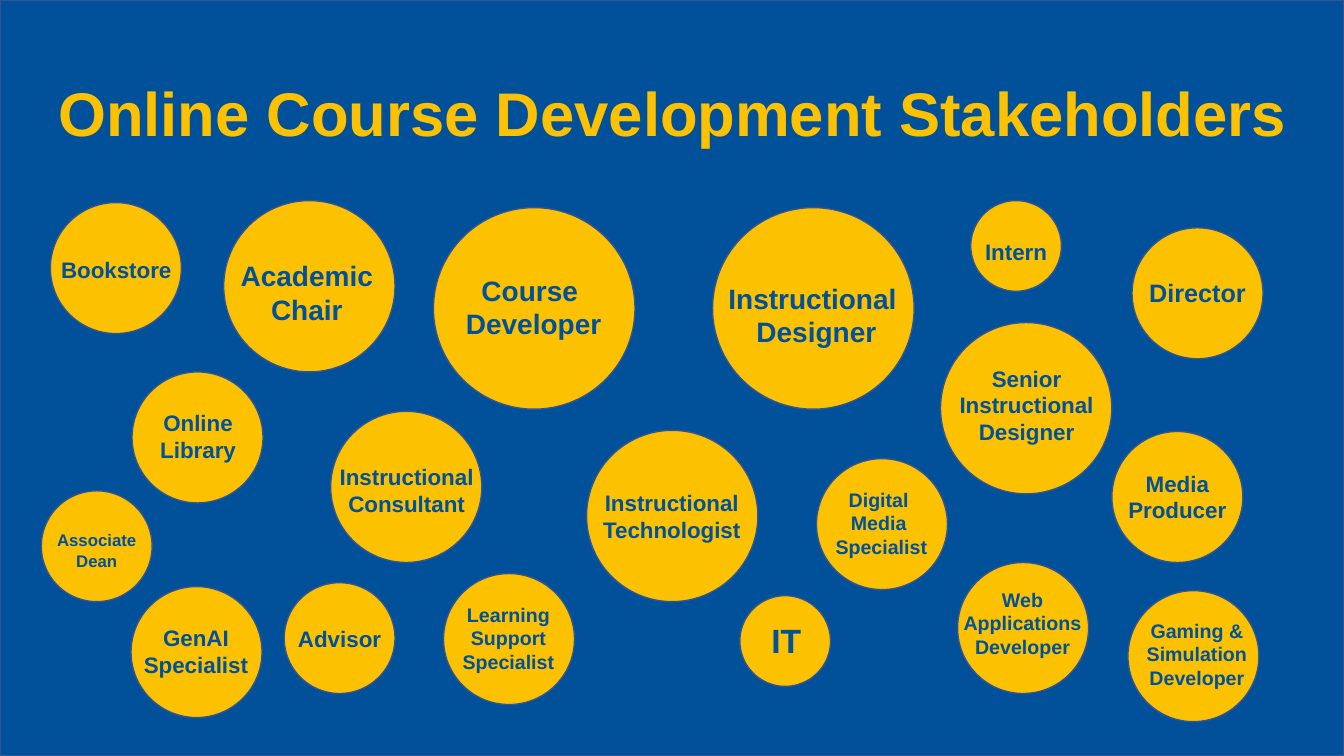
from pptx import Presentation
from pptx.dml.color import RGBColor
from pptx.enum.shapes import MSO_SHAPE
from pptx.enum.text import MSO_ANCHOR, MSO_AUTO_SIZE, PP_ALIGN
from pptx.util import Pt

BLUE = RGBColor(0x00, 0x50, 0x9A)
GOLD = RGBColor(0xFC, 0xC1, 0x00)
OUTLINE = RGBColor(0x32, 0x54, 0x91)
FONT = "Arial"
WIDTH, HEIGHT = 960, 540

TITLE = "Online Course Development Stakeholders"

# Label, font size, lines shown, circle (left, top, diameter), label (left, top, width)
STAKEHOLDERS = [
    ("Course \nDeveloper", 20, 2, (309.6, 148.3, 144), (321.1, 191.5, 120.2)),
    ("Instructional \nDesigner", 20, 2, (509, 148.3, 144), (511.2, 197.3, 144)),
    ("Senior\nInstructional \nDesigner", 16, 3, (671.8, 230.4, 122.4), (676.8, 257, 113)),
    ("Media\nProducer", 16, 2, (794.2, 308.2, 93.6), (794.2, 331.9, 93.6)),
    ("Digital \nMedia \nSpecialist", 14, 3, (583.2, 327.6, 93.6), (573.1, 344.9, 113)),
    ("Instructional\nTechnologist", 16, 2, (419, 307.4, 122.4), (423.4, 345.6, 113)),
    ("Instructional\nConsultant", 16, 2, (236.2, 293.8, 108), (234, 327.6, 113)),
    ("Academic\nChair", 20, 2, (159.8, 143.3, 122.4), (162.7, 181.4, 113)),
    ("Online\nLibrary", 16, 2, (94.3, 265.7, 93.6), (85, 288.7, 113)),
    ("Director", 18, 1, (808.6, 162.7, 93.6), (808.6, 194.4, 93.6)),
    ("Associate\nDean", 12, 2, (29.5, 350.6, 79.2), (29.5, 375.1, 79.2)),
    ("Web Applications Developer", 14, 3, (684, 401.8, 93.6), (673.9, 416.2, 113)),
    ("Advisor", 16, 1, (203, 416.2, 79.2), (203, 442.8, 79.2)),
    ("Learning\nSupport\nSpecialist", 14, 3, (316.8, 409.7, 93.6), (306.7, 427, 113)),
    ("IT", 24, 1, (528.5, 425.5, 64.8), (522, 439.2, 79.2)),
    ("Intern", 16, 1, (693.4, 143.3, 64.8), (686.2, 166.3, 79.2)),
    ("Bookstore", 16, 1, (36, 144.7, 93.6), (26.6, 179.3, 113)),
    ("Gaming & Simulation\nDeveloper", 14, 3, (805.7, 421.9, 93.6), (798.5, 438.5, 113)),
    ("GenAI\nSpecialist", 16, 2, (93.6, 419, 93.6), (83.5, 442.1, 113)),
]


def add_filled_shape(shapes, kind, left, top, width, height, color):
    shape = shapes.add_shape(kind, Pt(left), Pt(top), Pt(width), Pt(height))
    shape.shadow.inherit = False
    shape.fill.solid()
    shape.fill.fore_color.rgb = color
    shape.line.color.rgb = OUTLINE
    shape.line.width = Pt(1)
    return shape


def set_text(text_frame, text, size, color):
    text_frame.text = text
    text_frame.word_wrap = True
    text_frame.vertical_anchor = MSO_ANCHOR.TOP
    text_frame.auto_size = MSO_AUTO_SIZE.SHAPE_TO_FIT_TEXT
    for paragraph in text_frame.paragraphs:
        paragraph.alignment = PP_ALIGN.CENTER
        for run in paragraph.runs:
            run.font.name = FONT
            run.font.size = Pt(size)
            run.font.bold = True
            run.font.color.rgb = color


def add_stakeholder(slide, label, size, lines, circle, label_place):
    group = slide.shapes.add_group_shape()
    left, top, diameter = circle
    add_filled_shape(group.shapes, MSO_SHAPE.OVAL, left, top, diameter, diameter, GOLD)
    left, top, width = label_place
    height = 1.2 * size * lines + 7.2
    text_box = group.shapes.add_textbox(Pt(left), Pt(top), Pt(width), Pt(height))
    set_text(text_box.text_frame, label, size, BLUE)


def main():
    presentation = Presentation()
    presentation.slide_width, presentation.slide_height = Pt(WIDTH), Pt(HEIGHT)
    slide = presentation.slides.add_slide(presentation.slide_layouts[5])

    # Background panel, behind the title
    slide.background.fill.solid()
    slide.background.fill.fore_color.rgb = BLUE
    panel = add_filled_shape(slide.shapes, MSO_SHAPE.RECTANGLE, 0, 0, WIDTH, HEIGHT, BLUE)
    title = slide.shapes.title
    title.element.addprevious(panel.element)

    # Title
    title.left, title.top, title.width, title.height = Pt(32.4), Pt(49.7), Pt(897.1), Pt(60.5)
    set_text(title.text_frame, TITLE, 44, GOLD)

    # Stakeholder circles
    for stakeholder in STAKEHOLDERS:
        add_stakeholder(slide, *stakeholder)

    presentation.save("out.pptx")


if __name__ == "__main__":
    main()
